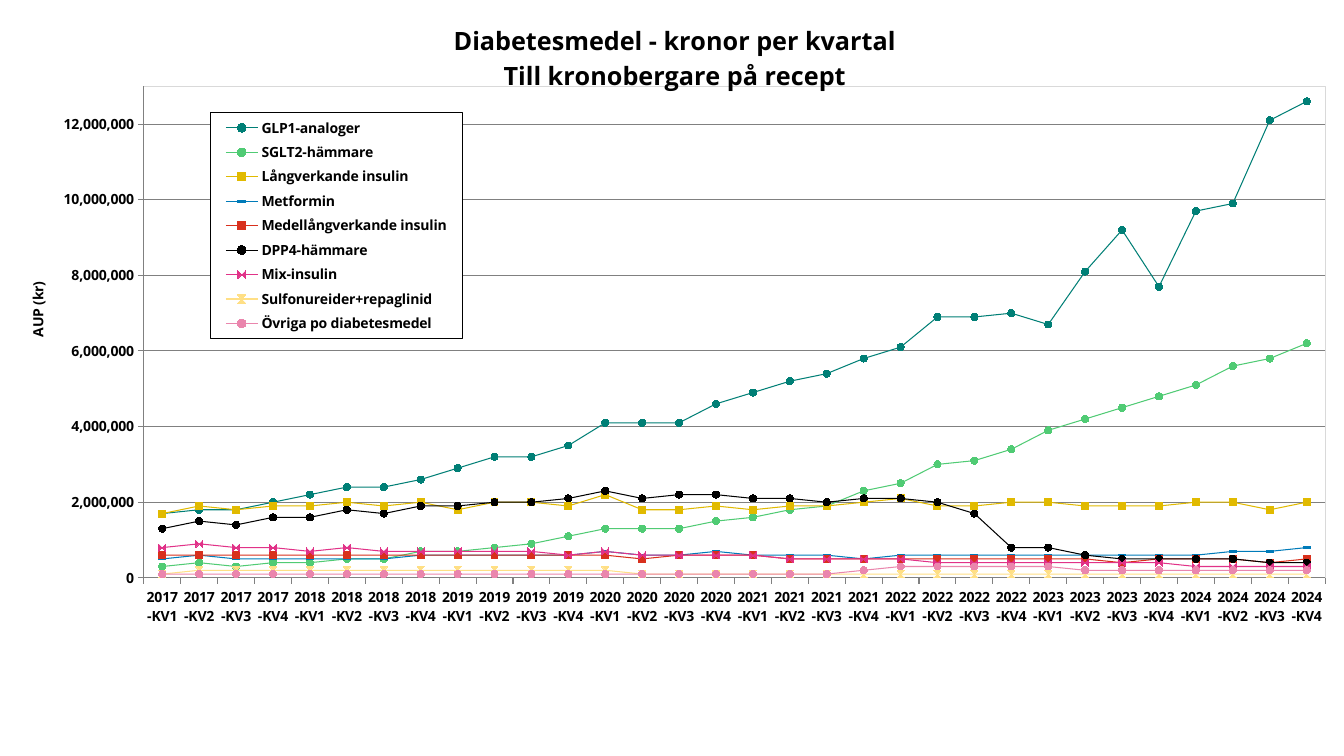
from dataclasses import dataclass

from lxml import etree
from pptx import Presentation
from pptx import util as u
from pptx.chart.data import CategoryChartData
from pptx.dml.color import RGBColor
from pptx.enum import chart as ch
from pptx.oxml import parse_xml
from pptx.oxml.ns import nsdecls, qn


@dataclass(frozen=True)
class Theme:
    font: str = "Open Sans"
    ink: str = "000000"
    paper: str = "FFFFFF"
    grid: str = "808080"
    frame: str = "D9D9D9"
    body_size: int = 10
    title_size: int = 18
    line_width: float = 0.75
    marker_size: int = 5


THEME = Theme()
MARK = ch.XL_MARKER_STYLE
STEP = 100_000
QUARTERS = [f"{year}-KV{quarter}" for year in range(2017, 2025) for quarter in range(1, 5)]
TITLE = ["Diabetesmedel - kronor per kvartal", "Till kronobergare på recept"]

DRUGS = [
    ("GLP1-analoger", "007F76", MARK.CIRCLE,
     "17 18x2 20 22 24x2 26 29 32x2 35 41x3 46 "
     "49 52 54 58 61 69x2 70 67 81 92 77 97 99 121 126"),
    ("SGLT2-hämmare", "50CB74", MARK.CIRCLE,
     "3 4 3 4x2 5x2 7x2 8 9 11 13x3 15 "
     "16 18 19 23 25 30 31 34 39 42 45 48 51 56 58 62"),
    ("Långverkande insulin", "E1BA00", MARK.SQUARE,
     "17 19 18 19x2 20 19 20 18 20x2 19 22 18x2 19 "
     "18 19x2 20 21 19x2 20x2 19x3 20x2 18 20"),
    ("Metformin", "007BB9", MARK.DASH, "5 6 5x5 6x5 7 6x2 7 6x3 5 6x9 7x2 8"),
    ("Medellångverkande insulin", "D8301D", MARK.SQUARE, "6x13 5 6x3 5x9 4 5x3 4 5"),
    ("DPP4-hämmare", "000000", MARK.CIRCLE,
     "13 15 14 16x2 18 17 19x2 20x2 21 23 21 22x2 "
     "21x2 20 21x2 20 17 8x2 6 5x4 4x2"),
    ("Mix-insulin", "E13288", MARK.AUTOMATIC, "8 9 8x2 7 8 7x5 6 7 6x4 5x4 4x7 3x4"),
    ("Sulfonureider+repaglinid", "FFDF85", MARK.AUTOMATIC, "1 2x12 1x19"),
    ("Övriga po diabetesmedel", "EA86AD", MARK.CIRCLE, "1x19 2 3x5 2x7"),
]


def expand(runs):
    costs = []
    for run in runs.split():
        value, _, count = run.partition("x")
        costs += [int(value) * STEP] * int(count or 1)
    return costs


def style_font(font, size):
    font.name = THEME.font
    font.size = u.Pt(size)
    font.bold = True
    font.color.rgb = RGBColor.from_string(THEME.ink)


def style_line(line, color):
    line.color.rgb = RGBColor.from_string(color)
    line.width = u.Pt(THEME.line_width)


def place(part, anchor, inner=False, **fractions):
    for old in part.findall(qn("c:layout")):
        part.remove(old)
    layout = parse_xml(f"<c:layout {nsdecls('c')}><c:manualLayout/></c:layout>")
    settings = {"layoutTarget": "inner"} if inner else {}
    settings |= {"xMode": "edge", "yMode": "edge"} | fractions
    for tag, value in settings.items():
        etree.SubElement(layout[0], qn(f"c:{tag}")).set("val", str(value))
    if anchor is None:
        part.insert(0, layout)
    else:
        part.find(qn(anchor)).addnext(layout)


def box_properties(fill, border):
    return parse_xml(
        f"<c:spPr {nsdecls('c', 'a')}>{fill}"
        f'<a:ln w="{u.Pt(THEME.line_width)}"><a:solidFill><a:srgbClr val="{border}"/>'
        "</a:solidFill></a:ln></c:spPr>"
    )


def write_title(title, lines, size):
    frame = title.text_frame
    for index, line in enumerate(lines):
        paragraph = frame.add_paragraph() if index else frame.paragraphs[0]
        paragraph.text = line
        style_font(paragraph.font, size)


def style_axes(chart):
    quarters, cost = chart.category_axis, chart.value_axis
    for axis in (quarters, cost):
        axis.major_tick_mark = ch.XL_TICK_MARK.OUTSIDE
        axis.minor_tick_mark = ch.XL_TICK_MARK.NONE
        style_line(axis.format.line, THEME.grid)
        style_font(axis.tick_labels.font, THEME.body_size)
    cost.minimum_scale, cost.maximum_scale, cost.major_unit = 0, 130 * STEP, 20 * STEP
    cost.tick_labels.number_format = "#,##0"
    cost.tick_labels.number_format_is_linked = False
    cost.has_major_gridlines = True
    style_line(cost.major_gridlines.format.line, THEME.grid)
    write_title(cost.axis_title, ["AUP (kr)"], THEME.body_size)
    place(cost.axis_title._element, "c:tx", x=0.01, y=0.42)


def style_series(series, color, symbol):
    series.smooth = False
    style_line(series.format.line, color)
    series.marker.style = symbol
    series.marker.size = THEME.marker_size
    series.marker.format.fill.solid()
    series.marker.format.fill.fore_color.rgb = RGBColor.from_string(color)
    style_line(series.marker.format.line, color)


def add_legend(chart):
    chart.has_legend = True
    legend = chart.legend
    legend.position = ch.XL_LEGEND_POSITION.RIGHT
    legend.include_in_layout = False
    style_font(legend.font, THEME.body_size)
    place(legend._element, "c:legendPos", x=0.15, y=0.17, w=0.19, h=0.34)
    paper = f'<a:solidFill><a:srgbClr val="{THEME.paper}"/></a:solidFill>'
    legend._element.find(qn("c:overlay")).addnext(box_properties(paper, THEME.ink))


def add_cost_chart(slide):
    costs = CategoryChartData(number_format="#,##0")
    costs.categories = QUARTERS
    for name, _, _, runs in DRUGS:
        costs.add_series(name, expand(runs))
    chart = slide.shapes.add_chart(
        ch.XL_CHART_TYPE.LINE_MARKERS, u.Cm(0.28), u.Cm(0), u.Cm(33.45), u.Cm(16.74), costs
    ).chart
    style_font(chart.font, THEME.body_size)
    chart.plots[0].vary_by_categories = False
    write_title(chart.chart_title, TITLE, THEME.title_size)
    style_axes(chart)
    for series, (_, color, symbol, _) in zip(chart.plots[0].series, DRUGS):
        style_series(series, color, symbol)
    add_legend(chart)
    plot_area = chart._chartSpace.chart.plotArea
    place(plot_area, None, inner=True, x=0.1, y=0.13, w=0.89, h=0.74)
    plot_area.append(box_properties("<a:noFill/>", THEME.frame))


def main():
    deck = Presentation()
    deck.slide_width, deck.slide_height = u.Cm(33.87), u.Cm(19.05)
    add_cost_chart(deck.slides.add_slide(deck.slide_layouts[6]))
    deck.save("out.pptx")


if __name__ == "__main__":
    main()
